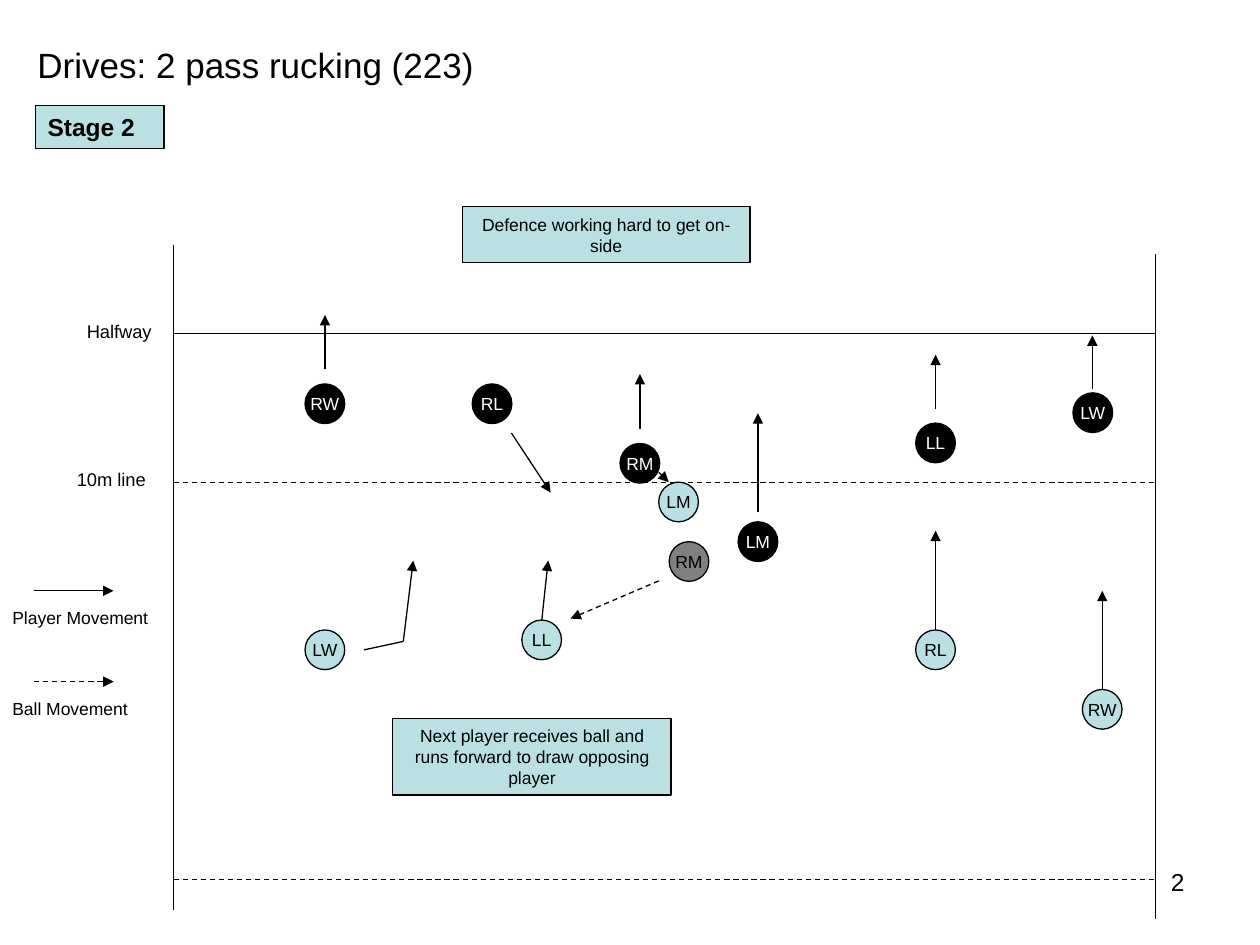
"""Build a rugby drill slide: players, their runs and the pass on a marked pitch."""
from lxml import etree
from pptx import Presentation
from pptx.dml.color import RGBColor
from pptx.enum.dml import MSO_LINE
from pptx.enum.shapes import MSO_CONNECTOR, MSO_SHAPE
from pptx.enum.text import MSO_ANCHOR, MSO_AUTO_SIZE, PP_ALIGN
from pptx.oxml.ns import qn
from pptx.util import Cm, Pt

BLACK = RGBColor(0x00, 0x00, 0x00)
WHITE = RGBColor(0xFF, 0xFF, 0xFF)
GREY = RGBColor(0x80, 0x80, 0x80)
AQUA = RGBColor(0xBB, 0xE0, 0xE3)

LEFT, CENTER, RIGHT = PP_ALIGN.LEFT, PP_ALIGN.CENTER, PP_ALIGN.RIGHT
TOP, MIDDLE = MSO_ANCHOR.TOP, MSO_ANCHOR.MIDDLE
OVAL, RECTANGLE = MSO_SHAPE.OVAL, MSO_SHAPE.RECTANGLE
STRAIGHT, DASH = MSO_CONNECTOR.STRAIGHT, MSO_LINE.DASH
NO_AUTOSIZE = MSO_AUTO_SIZE.NONE

TOUCH_LEFT, TOUCH_RIGHT = 3.5, 23.3
PLAYER_SIZE = 0.8


class DrillPage:
    """Hold the style and the current slide, and draw each kind of element."""

    def __init__(self, page, font="Arial", line_width=0.75):
        self.page = page
        self.font = font
        self.line_width = Pt(line_width)

    def set_text(self, box, text, size, align=LEFT, anchor=TOP, wrap=False,
                 color=BLACK, bold=False):
        frame = box.text_frame
        frame.text = text
        frame.word_wrap = wrap
        frame.auto_size = NO_AUTOSIZE
        frame.vertical_anchor = anchor
        para = frame.paragraphs[0]
        para.alignment = align
        para.font.name = self.font
        para.font.size = Pt(size)
        para.font.bold = bold
        para.font.color.rgb = color

    def title(self, text, left, top, width, height, size):
        box = self.page.shapes.title
        box.left, box.top, box.width, box.height = map(Cm, (left, top, width, height))
        self.set_text(box, text, size)

    def label(self, text, left, top, width, height, size=10, **style):
        box = self.page.shapes.add_textbox(*map(Cm, (left, top, width, height)))
        self.set_text(box, text, size, **style)

    def shape(self, kind, text, left, top, width, height, fill, size=10, **style):
        box = self.page.shapes.add_shape(kind, *map(Cm, (left, top, width, height)))
        box.shadow.inherit = False
        box.fill.solid()
        box.fill.fore_color.rgb = fill
        box.line.color.rgb = BLACK
        box.line.width = self.line_width
        self.set_text(box, text, size, **style)

    def note(self, text, left, top, width, height, **style):
        self.shape(RECTANGLE, text, left, top, width, height, AQUA, wrap=True, **style)

    def player(self, text, left, top, fill):
        color = WHITE if fill == BLACK else BLACK
        self.shape(OVAL, text, left, top, PLAYER_SIZE, PLAYER_SIZE, fill,
                   align=CENTER, anchor=MIDDLE, color=color)

    def line(self, x1, y1, x2, y2, dashed=False, arrow=False):
        connector = self.page.shapes.add_connector(STRAIGHT, *map(Cm, (x1, y1, x2, y2)))
        connector.line.color.rgb = BLACK
        connector.line.width = self.line_width
        if dashed:
            connector.line.dash_style = DASH
        properties = connector._element.spPr
        if arrow:
            etree.SubElement(properties.find(qn("a:ln")), qn("a:tailEnd"), type="triangle")
        etree.SubElement(properties, qn("a:effectLst"))


def main():
    deck = Presentation()
    deck.slide_width, deck.slide_height = Cm(25.4), Cm(19.05)
    drill = DrillPage(deck.slides.add_slide(deck.slide_layouts[5]))

    drill.title("Drives: 2 pass rucking (223)", 0.5, 0.74, 9.37, 1.12, 20)
    drill.note("Stage 2", 0.71, 2.13, 2.6, 0.86, size=14, bold=True)

    drill.line(TOUCH_LEFT, 4.93, TOUCH_LEFT, 18.34)
    drill.line(TOUCH_RIGHT, 5.13, TOUCH_RIGHT, 18.52)
    for y, dashed in ((6.73, False), (9.73, True), (17.73, True)):
        drill.line(TOUCH_LEFT, y, TOUCH_RIGHT, y, dashed=dashed)
    drill.label("Halfway", 1.5, 6.32, 1.85, 0.7, size=10.5)
    drill.label("10m line", 1.3, 9.32, 1.93, 0.7, size=10.5)

    players = (
        ("LW", 6.15, 12.7, AQUA), ("LM", 13.28, 9.72, AQUA), ("RM", 13.49, 10.92, GREY),
        ("LL", 10.52, 12.5, AQUA), ("RL", 18.46, 12.7, AQUA), ("RW", 21.82, 13.9, AQUA),
        ("LW", 21.63, 7.92, BLACK), ("LL", 18.46, 8.53, BLACK), ("LM", 14.88, 10.52, BLACK),
        ("RM", 12.5, 8.94, BLACK), ("RL", 9.52, 7.74, BLACK), ("RW", 6.15, 7.74, BLACK),
    )
    for player in players:
        drill.player(*player)

    runs = (
        (8.13, 12.93, 8.33, 11.3), (10.92, 12.52, 11.05, 11.3),
        (13.28, 9.52, 13.48, 9.72), (10.31, 8.73, 11.1, 9.93),
    )
    for run in runs:
        drill.line(*run, arrow=True)
    straight_runs = (
        (6.55, 7.44, 6.35), (12.9, 8.64, 7.54), (15.28, 10.33, 8.33), (18.86, 8.25, 7.15),
        (18.86, 12.7, 10.7), (22.02, 7.85, 6.76), (22.22, 13.9, 11.91),
    )
    for x, start, end in straight_runs:
        drill.line(x, start, x, end, arrow=True)
    drill.line(7.34, 13.1, 8.13, 12.93)
    drill.line(13.28, 11.71, 11.5, 12.47, dashed=True, arrow=True)

    legend = (("Player Movement", 11.91, 3.25, False), ("Ball Movement", 13.74, 2.84, True))
    for text, y, width, dashed in legend:
        drill.line(0.69, y, 2.29, y, dashed=dashed, arrow=True)
        drill.label(text, 0, y + 0.2, width, 0.69)

    drill.note("Defence working hard to get on-side", 9.32, 4.17, 5.8, 1.12,
               align=CENTER, anchor=MIDDLE)
    drill.note("Next player receives ball and runs forward to draw opposing player",
               7.92, 14.48, 5.61, 1.55, align=CENTER, anchor=MIDDLE)
    drill.label("2", 18.2, 17.35, 5.93, 1.32, size=14, align=RIGHT, wrap=True)

    deck.save("out.pptx")


if __name__ == "__main__":
    main()
